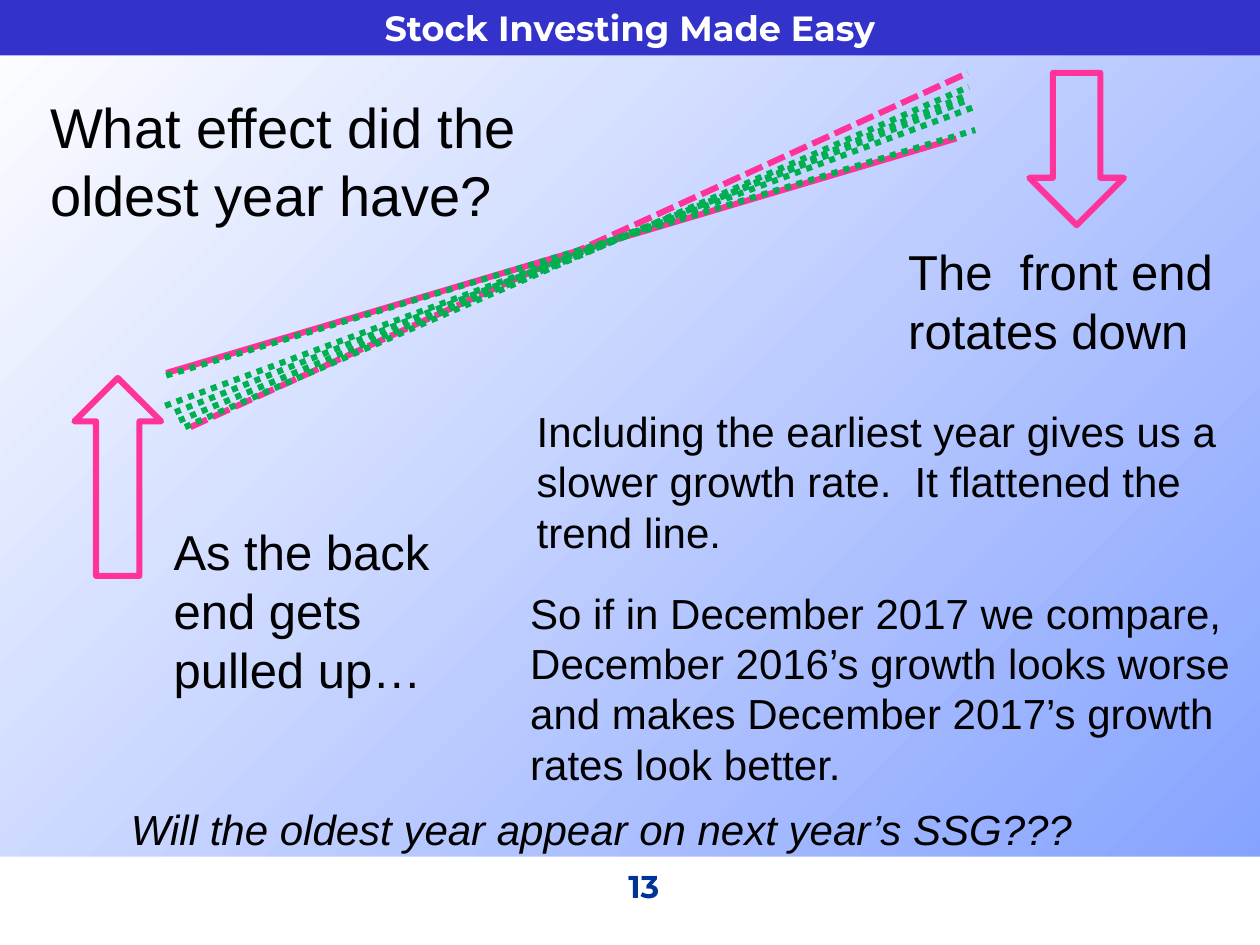
from dataclasses import dataclass

from lxml.etree import SubElement
from pptx import Presentation
from pptx.dml.color import RGBColor
from pptx.enum.dml import MSO_LINE
from pptx.enum.shapes import MSO_CONNECTOR, MSO_SHAPE
from pptx.enum.text import MSO_ANCHOR, MSO_AUTO_SIZE, PP_ALIGN
from pptx.oxml.ns import qn
from pptx.util import Cm, Pt


@dataclass(frozen=True)
class Theme:
    white: str = "FFFFFF"
    sky: str = "819FFF"
    banner: str = "3333CC"
    navy: str = "003399"
    black: str = "000000"
    pink: str = "FF3399"
    green: str = "00B050"
    body_font: str = "Arial"
    heading_font: str = "Montserrat"
    question_size: int = 32
    label_size: int = 28
    body_size: int = 24
    title_size: int = 20
    number_size: int = 18
    stroke: float = 3.5


class SlideBuilder:
    def __init__(self, slide, theme):
        self.slide = slide
        self.theme = theme

    def background(self, start, end):
        fill = self.slide.background.fill
        fill.gradient()
        fill.gradient_angle = 315
        for stop, position, color in zip(fill.gradient_stops, (0, 1), (start, end)):
            stop.position = position
            stop.color.rgb = RGBColor.from_string(color)

    def fill_text(self, shape, lines, size, align=PP_ALIGN.LEFT, wrap=True,
                  color=None, **font_values):
        frame = shape.text_frame
        frame.text = "\n".join(lines)
        frame_format = {
            "word_wrap": wrap,
            "auto_size": MSO_AUTO_SIZE.SHAPE_TO_FIT_TEXT,
            "vertical_anchor": MSO_ANCHOR.TOP,
        }
        for name, value in frame_format.items():
            setattr(frame, name, value)
        font_format = {"name": self.theme.body_font, "size": Pt(size), **font_values}
        for paragraph in frame.paragraphs:
            paragraph.alignment = align
            for run in paragraph.runs:
                for name, value in font_format.items():
                    setattr(run.font, name, value)
                run.font.color.rgb = RGBColor.from_string(color or self.theme.black)

    def text(self, box, lines, size, parent=None, **style):
        shapes = (parent or self.slide).shapes
        shape = shapes.add_textbox(*map(Cm, box))
        self.fill_text(shape, lines, size, **style)

    def band(self, box, color):
        shape = self.slide.shapes.add_shape(MSO_SHAPE.RECTANGLE, *map(Cm, box))
        shape.shadow.inherit = False
        shape.fill.solid()
        shape.fill.fore_color.rgb = RGBColor.from_string(color)
        shape.line.fill.background()
        return shape

    def stroke(self, line, color, dash=None):
        line.color.rgb = RGBColor.from_string(color)
        line.width = Pt(self.theme.stroke)
        if dash is not None:
            line.dash_style = dash

    def trend_line(self, start, end, color, dash=None):
        connector = self.slide.shapes.add_connector(
            MSO_CONNECTOR.STRAIGHT, *map(Cm, start + end))
        self.stroke(connector.line, color, dash)
        SubElement(connector._element.spPr, qn("a:effectLst"))

    def labelled_arrow(self, preset, arrow_box, text_box, lines):
        group = self.slide.shapes.add_group_shape()
        arrow = group.shapes.add_shape(preset, *map(Cm, arrow_box))
        arrow.shadow.inherit = False
        arrow.fill.background()
        self.stroke(arrow.line, self.theme.pink)
        self.text(text_box, lines, self.theme.label_size, parent=group)


def main():
    theme = Theme()
    presentation = Presentation()
    presentation.slide_width = Cm(25.4)
    presentation.slide_height = Cm(19.05)
    slide = presentation.slides.add_slide(presentation.slide_layouts[6])
    builder = SlideBuilder(slide, theme)

    # Background, banner and footer
    builder.background(theme.white, theme.sky)
    builder.band((0, 17.27, 25.4, 1.78), theme.white)
    banner = builder.band((0, 0, 25.4, 1.12), theme.banner)
    builder.fill_text(banner, ["Stock Investing Made Easy"], theme.title_size,
                      align=PP_ALIGN.CENTER, color=theme.white,
                      name=theme.heading_font, bold=True)
    builder.text((8.26, 17.35, 5.28, 1.27), ["13"], theme.number_size,
                 align=PP_ALIGN.RIGHT, color=theme.navy,
                 name=theme.heading_font, bold=True)

    # Trend lines: the two extremes, then the rotation between them
    builder.trend_line((3.35, 7.52), (19.28, 2.79), theme.pink)
    builder.trend_line((3.84, 8.61), (19.51, 1.47), theme.pink, MSO_LINE.SQUARE_DOT)
    rotation = [
        ((3.61, 8.48), (19.51, 1.91)),
        ((3.35, 7.57), (19.66, 2.62)),
        ((3.73, 8.61), (19.53, 1.75)),
        ((3.33, 8.18), (19.63, 2.16)),
        ((3.53, 8.31), (19.53, 2.01)),
    ]
    for start, end in rotation:
        builder.trend_line(start, end, theme.green, MSO_LINE.ROUND_DOT)

    # Arrows with their labels
    builder.labelled_arrow(MSO_SHAPE.UP_ARROW, (1.5, 7.62, 1.75, 3.99),
                           (3.25, 10.39, 6.48, 3.84),
                           ["As the back end gets pulled up…"])
    builder.labelled_arrow(MSO_SHAPE.DOWN_ARROW, (20.75, 1.47, 1.91, 3.07),
                           (18.06, 4.75, 7.19, 2.64),
                           ["The  front end", "rotates down"])

    # Question and explanation
    builder.text((0.76, 1.75, 9.96, 3),
                 ["What effect did the oldest year have?"], theme.question_size)
    builder.text((10.57, 8.05, 14.68, 4.37),
                 ["Including the earliest year gives us a slower growth rate.  "
                  "It flattened the trend line."], theme.body_size)
    builder.text((2.39, 16.08, 19.69, 1.27),
                 ["Will the oldest year appear on next year’s SSG???"],
                 theme.body_size, wrap=False, italic=True)
    builder.text((10.44, 11.71, 14.88, 5.38),
                 ["So if in December 2017 we compare, December 2016’s growth "
                  "looks worse and makes December 2017’s growth rates look better."],
                 theme.body_size)

    presentation.save("out.pptx")


if __name__ == "__main__":
    main()
